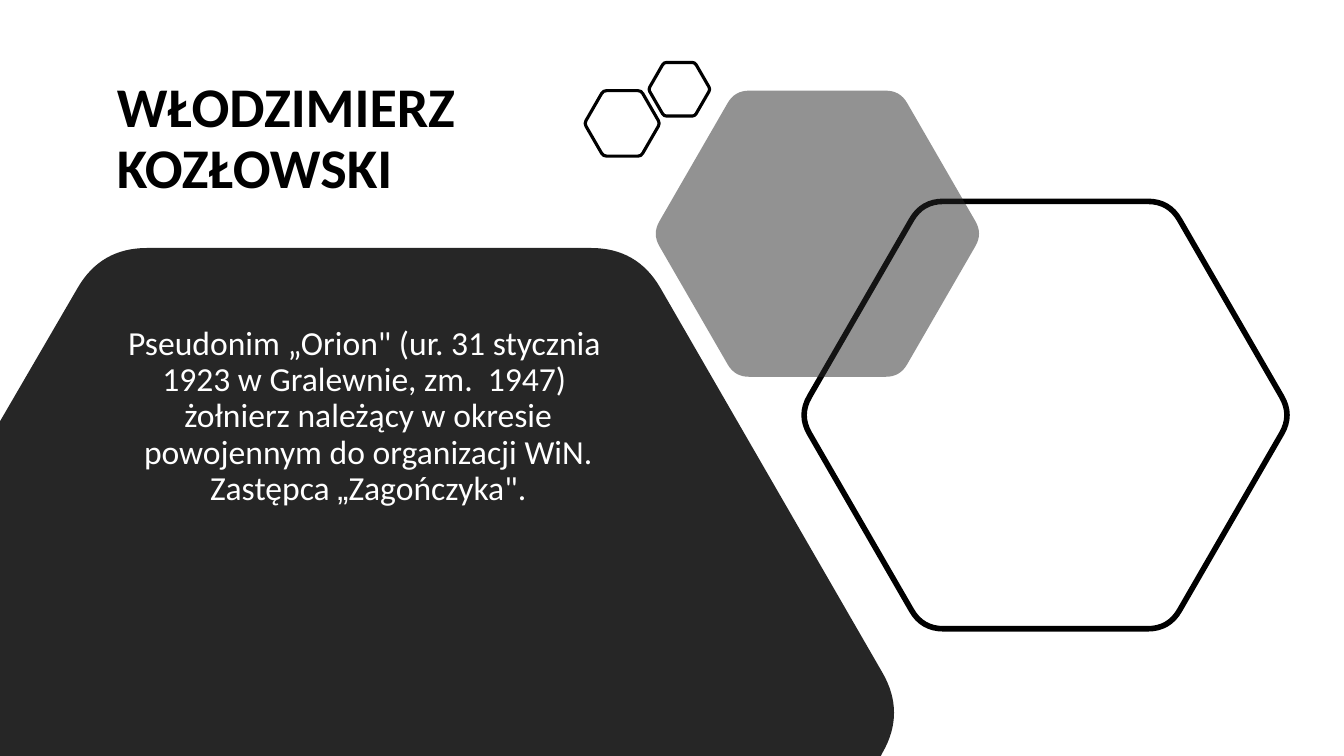
import math
from lxml import etree
from pptx import Presentation
from pptx import util as u
from pptx.dml.color import RGBColor
from pptx.enum import text
from pptx.oxml import ns

INK = {"black": "000000", "dark": "262626", "white": "FFFFFF"}
CUT = 0.086  # share of each side taken by a rounded corner

deck = Presentation()
deck.slide_width, deck.slide_height = u.Cm(33.87), u.Cm(19.05)
slide = deck.slides.add_slide(deck.slide_layouts[5])


def corners(x, y, high):
    """Start, tip and end of each hexagon corner, clockwise from top left."""
    side = high / math.sqrt(3)
    tips = [(x + side * math.cos(math.radians(a)),
             y + side * math.sin(math.radians(a))) for a in range(240, 600, 60)]
    dots = []
    for i, tip in enumerate(tips):
        start, end = [[t + (n - t) * CUT for t, n in zip(tip, near)]
                      for near in (tips[i - 1], tips[(i + 1) % 6])]
        dots += [start, tip, end]
    return dots


def draw(dots, bends=6, fill=None, alpha=None, line=None):
    spots = [(u.Cm(x), u.Cm(y)) for x, y in dots]
    pen = slide.shapes.build_freeform(*spots[0])
    pen.add_line_segments(spots[1:], close=True)
    shape = pen.convert_to_shape()
    # Turn the two segments of each corner into one curve
    steps = shape._element.xpath(".//a:path/*")
    for i in range(bends):
        first, last = steps[3 * i + 1:3 * i + 3]
        curve = etree.Element(ns.qn("a:quadBezTo"))
        first.addprevious(curve)
        for step in (first, last):
            curve.append(step[0])
            step.getparent().remove(step)
    shape.shadow.inherit = False
    if fill:
        shape.fill.solid()
        shape.fill.fore_color.rgb = RGBColor.from_string(INK[fill])
    else:
        shape.fill.background()
    if alpha:
        tint = shape._element.xpath("./p:spPr/a:solidFill/a:srgbClr")[0]
        etree.SubElement(tint, ns.qn("a:alpha"), val=str(alpha * 1000))
    if line:
        shape.line.color.rgb = RGBColor.from_string(INK["black"])
        shape.line.width = u.Pt(line)
    else:
        shape.line.fill.background()


# Large dark hexagon: three corners, then the slide edges
panel = corners(9.3, 17.96, 23.42)[:9]
draw(panel + [(22.2, 19.05), (0, 19.05), (0, 10.62)], bends=3, fill="dark")

# Outlined and translucent hexagons
draw(corners(26.35, 10.46, 10.77), line=4)
draw(corners(20.6, 5.89, 7.21), fill="dark", alpha=50)
draw(corners(15.68, 3.11, 1.65), line=2.25)
draw(corners(17.12, 2.25, 1.35), line=2.25)

# Title and body text
title = slide.shapes.title
title.left, title.top, title.width, title.height = map(u.Cm, (2.69, 1.24, 11.89, 4.57))
body = slide.shapes.add_textbox(u.Cm(2.69), u.Cm(8.1), u.Cm(13.18), u.Cm(8.59))

name = [[("WŁODZIMIERZ KOZŁOWSKI", "Calibri")]]
story = [
    [("Pseudonim „Orion\" (ur. 31 stycznia \n1923 w Gralewnie, zm.  1947) ", "Calibri")],
    [(" żołnierz należący w okresie \npowojennym do organizacji WiN. Zastępca ", "Calibri"),
     ("„", "Arial"), ("Zagończyka\".", "Calibri")],
]
for box, paras, size, ink, bold, side, anchor in (
        (title, name, 40, "black", True, text.PP_ALIGN.LEFT, text.MSO_ANCHOR.MIDDLE),
        (body, story, 24, "white", False, text.PP_ALIGN.CENTER, text.MSO_ANCHOR.TOP)):
    frame = box.text_frame
    frame.word_wrap = True
    frame.auto_size = text.MSO_AUTO_SIZE.NONE
    frame.vertical_anchor = anchor
    for i, parts in enumerate(paras):
        para = frame.add_paragraph() if i else frame.paragraphs[0]
        para.alignment = side
        para.line_spacing = 0.9
        para.space_before = u.Pt(0)
        for words, face in parts:
            for row, piece in enumerate(words.split("\n")):
                if row:
                    para.add_line_break()
                run = para.add_run()
                run.text = piece
                run.font.name, run.font.size, run.font.bold = face, u.Pt(size), bold
                run.font.color.rgb = RGBColor.from_string(INK[ink])

deck.save("out.pptx")
